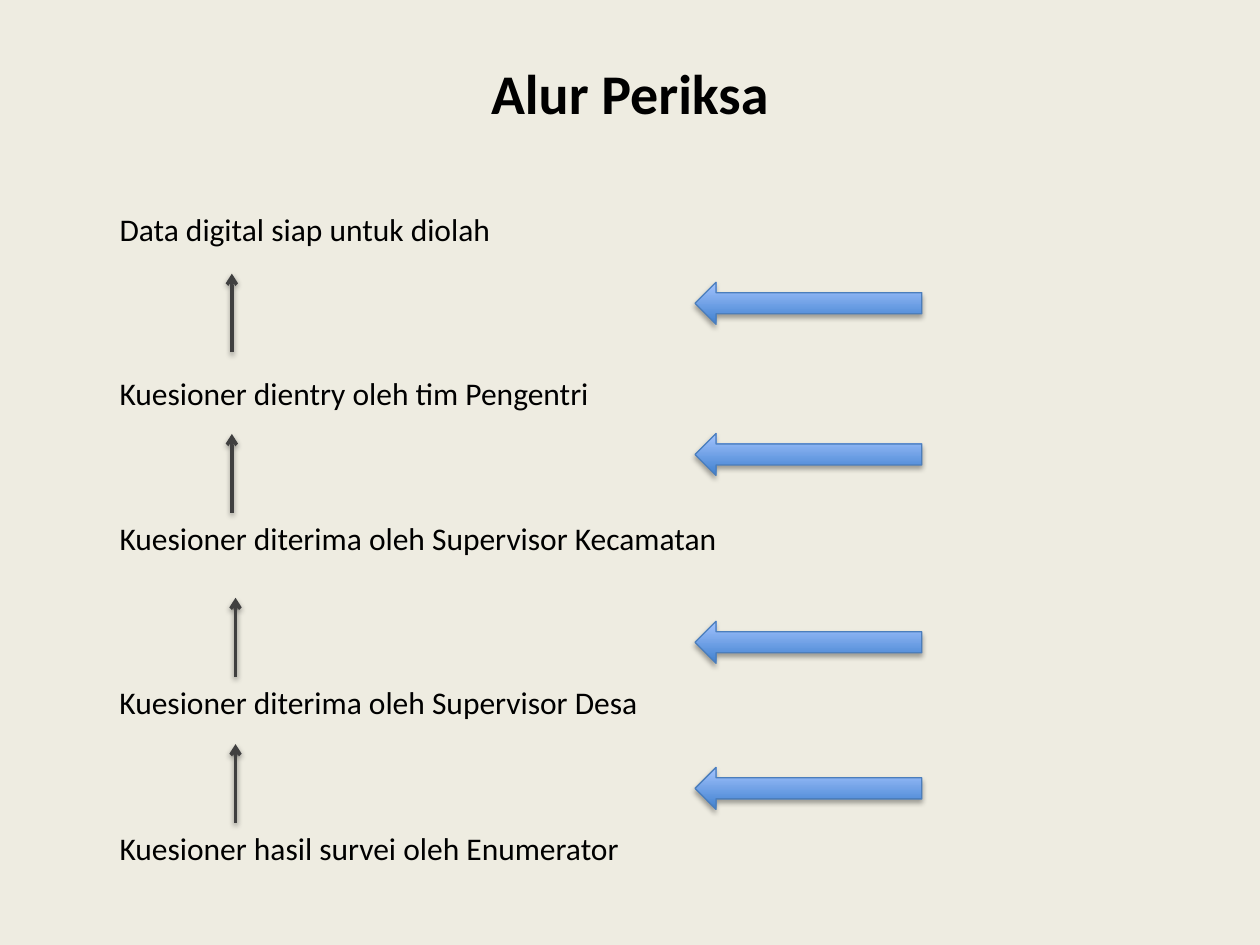
from lxml import etree
from pptx import Presentation
from pptx import util as u
from pptx.dml.color import RGBColor
from pptx.enum import shapes, text
from pptx.oxml import ns

BACKGROUND = RGBColor(0xEE, 0xEC, 0xE1)
BLACK = RGBColor(0, 0, 0)
GRAY = RGBColor(0x40, 0x40, 0x40)
BLUE_EDGE = RGBColor(0x4B, 0x7E, 0xBC)
BLUE_DARK = RGBColor(0x3F, 0x80, 0xCE)
BLUE_LIGHT = RGBColor(0xA4, 0xC4, 0xFF)

STEPS = [
    ("Data digital siap untuk diolah", 116.6, 229.7),
    ("Kuesioner dientry oleh tim Pengentri", 210.2, 286.6),
    ("Kuesioner diterima oleh Supervisor Kecamatan", 293, 360.7),
    ("Kuesioner diterima oleh Supervisor Desa", 386.6, 313.9),
    ("Kuesioner hasil survei oleh Enumerator", 470.2, 303.8),
]
BLOCK_ARROW_TOPS = [161.3, 247.7, 355, 438.5]
FLOW_ARROWS = [(132.5, 201.4), (132.5, 293), (134.6, 386.6), (134.6, 470.2)]
FLOW_LENGTH = 45


class SlideBuilder:
    font = "Calibri"

    def __init__(self, presentation):
        self.slide = presentation.slides.add_slide(presentation.slide_layouts[5])
        fill = self.slide.background.fill
        fill.solid()
        fill.fore_color.rgb = BACKGROUND

    def add_run(self, paragraph, wording, size, bold=False):
        run = paragraph.add_run()
        run.text = wording
        run.font.name = self.font
        run.font.size = u.Pt(size)
        run.font.bold = bold
        run.font.color.rgb = BLACK

    def add_shadow(self, shape, distance, opacity):
        properties = shape._element.spPr
        effects = etree.SubElement(properties, ns.qn("a:effectLst"))
        shadow = etree.SubElement(
            effects, ns.qn("a:outerShdw"), blurRad=str(u.Pt(3.1)),
            dist=str(u.Pt(distance)), dir="5400000", rotWithShape="0")
        color = etree.SubElement(shadow, ns.qn("a:srgbClr"), val=str(BLACK))
        etree.SubElement(color, ns.qn("a:alpha"), val=str(opacity * 1000))

    def title(self, wording):
        shape = self.slide.shapes.title
        shape.left, shape.top = u.Pt(36), u.Pt(21.6)
        shape.width, shape.height = u.Pt(648), u.Pt(62)
        frame = shape.text_frame
        frame.vertical_anchor = text.MSO_ANCHOR.MIDDLE
        paragraph = frame.paragraphs[0]
        paragraph.alignment = text.PP_ALIGN.CENTER
        self.add_run(paragraph, wording, 32, bold=True)

    def label(self, wording, top, width):
        shape = self.slide.shapes.add_textbox(
            u.Pt(61.2), u.Pt(top), u.Pt(width), u.Pt(29))
        frame = shape.text_frame
        frame.word_wrap = False
        frame.auto_size = text.MSO_AUTO_SIZE.SHAPE_TO_FIT_TEXT
        self.add_run(frame.paragraphs[0], wording, 18)

    def block_arrow(self, top):
        shape = self.slide.shapes.add_shape(
            shapes.MSO_SHAPE.LEFT_ARROW,
            u.Pt(397.2), u.Pt(top), u.Pt(129.6), u.Pt(24))
        shape.fill.gradient()
        shape.fill.gradient_angle = 90
        for stop, color in zip(shape.fill.gradient_stops, (BLUE_DARK, BLUE_LIGHT)):
            stop.color.rgb = color
        shape.line.color.rgb = BLUE_EDGE
        shape.line.width = u.Pt(0.75)
        self.add_shadow(shape, 1.8, 35)

    def flow_arrow(self, x, bottom):
        connector = self.slide.shapes.add_connector(
            shapes.MSO_CONNECTOR.STRAIGHT,
            u.Pt(x), u.Pt(bottom), u.Pt(x), u.Pt(bottom - FLOW_LENGTH))
        connector.line.color.rgb = GRAY
        connector.line.width = u.Pt(2)
        line = connector.line._get_or_add_ln()
        etree.SubElement(line, ns.qn("a:tailEnd"), type="arrow")
        self.add_shadow(connector, 1.6, 38)


def main():
    presentation = Presentation()
    presentation.slide_width = u.Pt(720)
    presentation.slide_height = u.Pt(540)
    builder = SlideBuilder(presentation)
    builder.title("Alur Periksa")
    for wording, top, width in reversed(STEPS):
        builder.label(wording, top, width)
    for top in reversed(BLOCK_ARROW_TOPS):
        builder.block_arrow(top)
    for x, bottom in reversed(FLOW_ARROWS):
        builder.flow_arrow(x, bottom)
    presentation.save("out.pptx")


if __name__ == "__main__":
    main()
